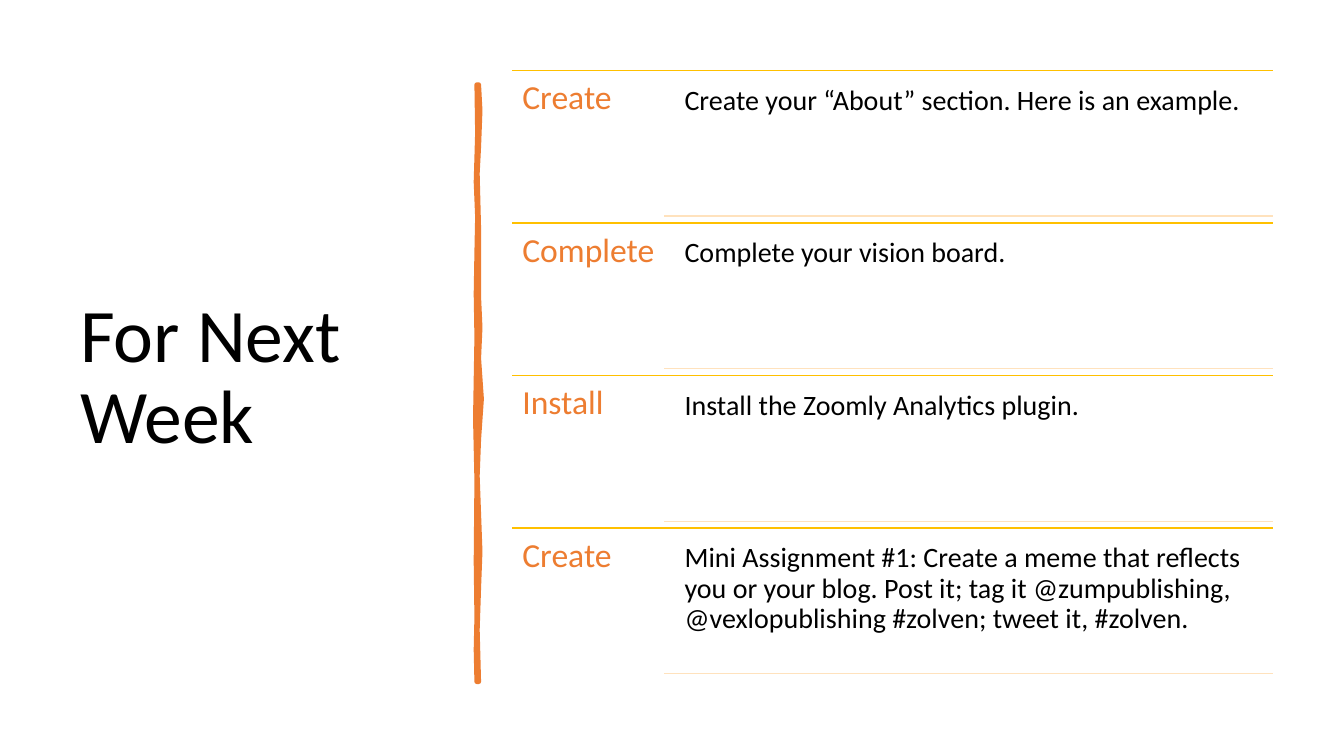
from pptx import Presentation
from pptx.dml.color import RGBColor
from pptx.enum import shapes, text
from pptx.oxml.ns import qn
from pptx.util import Pt
from lxml import etree

BLACK = RGBColor(0x00, 0x00, 0x00)
ORANGE = RGBColor(0xED, 0x7D, 0x31)
GOLD = RGBColor(0xFF, 0xC0, 0x00)
PEACH = RGBColor(0xFF, 0xE2, 0xBD)
FONT = "Calibri"

LEFT, RIGHT, TOP, PITCH = 366, 909.5, 50.4, 108.96
TASKS = [
    ("Create", "Create your “About” section. Here is an example."),
    ("Complete", "Complete your vision board."),
    ("Install", "Install the Zoomly Analytics plugin."),
    ("Create", "Mini Assignment #1: Create a meme that reflects you or your blog. "
               "Post it; tag it @zumpublishing, @vexlopublishing #zolven; "
               "tweet it, #zolven."),
]
STROKE = [
    (342, 60.5), (343, 79), (342, 105), (341, 124), (342, 163), (342, 212),
    (343, 234), (342, 256), (344, 285), (342, 314), (341, 340), (342, 367),
    (343, 394), (342, 420), (341, 450), (342, 487),
    (340.5, 487), (340, 464), (340.5, 441), (340, 401), (340.5, 343),
    (339.5, 299), (340.5, 241), (340, 210), (340.5, 180), (341, 155),
    (340, 130), (341, 95), (340.5, 60.5),
]


def style(para, size, color):
    para.line_spacing = 0.9
    para.alignment = text.PP_ALIGN.LEFT
    para.font.name = FONT
    para.font.size = Pt(size)
    para.font.color.rgb = color


def set_title(slide, words):
    title = slide.shapes.title
    title.left, title.top = Pt(50), Pt(50.4)
    title.width, title.height = Pt(269), Pt(440)
    frame = title.text_frame
    frame.text = words
    frame.word_wrap = True
    frame.auto_size = text.MSO_AUTO_SIZE.NONE
    frame.vertical_anchor = text.MSO_ANCHOR.MIDDLE
    style(frame.paragraphs[0], 54, BLACK)


def add_text(slide, words, x, y, width, height, inset, size, color):
    box = slide.shapes.add_textbox(Pt(x), Pt(y), Pt(width), Pt(height))
    frame = box.text_frame
    frame.word_wrap = True
    frame.margin_left = frame.margin_right = Pt(inset)
    frame.margin_top = frame.margin_bottom = Pt(inset)
    frame.text = words
    style(frame.paragraphs[0], size, color)


def add_rule(slide, x, y, color):
    rule = slide.shapes.add_connector(
        shapes.MSO_CONNECTOR.STRAIGHT, Pt(x), Pt(y), Pt(RIGHT), Pt(y))
    rule.line.color.rgb = color
    rule.line.width = Pt(1)
    etree.SubElement(rule._element.spPr, qn("a:effectLst"))


def add_stroke(slide, points):
    first, *rest = [(Pt(x), Pt(y)) for x, y in points]
    pen = slide.shapes.build_freeform(*first)
    pen.add_line_segments(rest, close=True)
    stroke = pen.convert_to_shape()
    stroke.shadow.inherit = False
    stroke.fill.solid()
    stroke.fill.fore_color.rgb = ORANGE
    stroke.line.color.rgb = ORANGE
    stroke.line.width = Pt(3.25)
    etree.SubElement(stroke.line._get_or_add_ln(), qn("a:round"))


def add_task(slide, y, verb, detail):
    add_rule(slide, LEFT, y, GOLD)
    add_text(slide, verb, LEFT, y, 109, 109, 7.2, 24, ORANGE)
    add_text(slide, detail, 483, y + 5, 426.5, 99, 6, 20, BLACK)
    add_rule(slide, 474.5, y + 104, PEACH)


def main():
    deck = Presentation()
    deck.slide_width, deck.slide_height = Pt(960), Pt(540)
    slide = deck.slides.add_slide(deck.slide_layouts[5])
    set_title(slide, "For Next Week")
    add_stroke(slide, STROKE)
    for row, (verb, detail) in enumerate(TASKS):
        add_task(slide, TOP + row * PITCH, verb, detail)
    deck.save("out.pptx")


if __name__ == "__main__":
    main()
